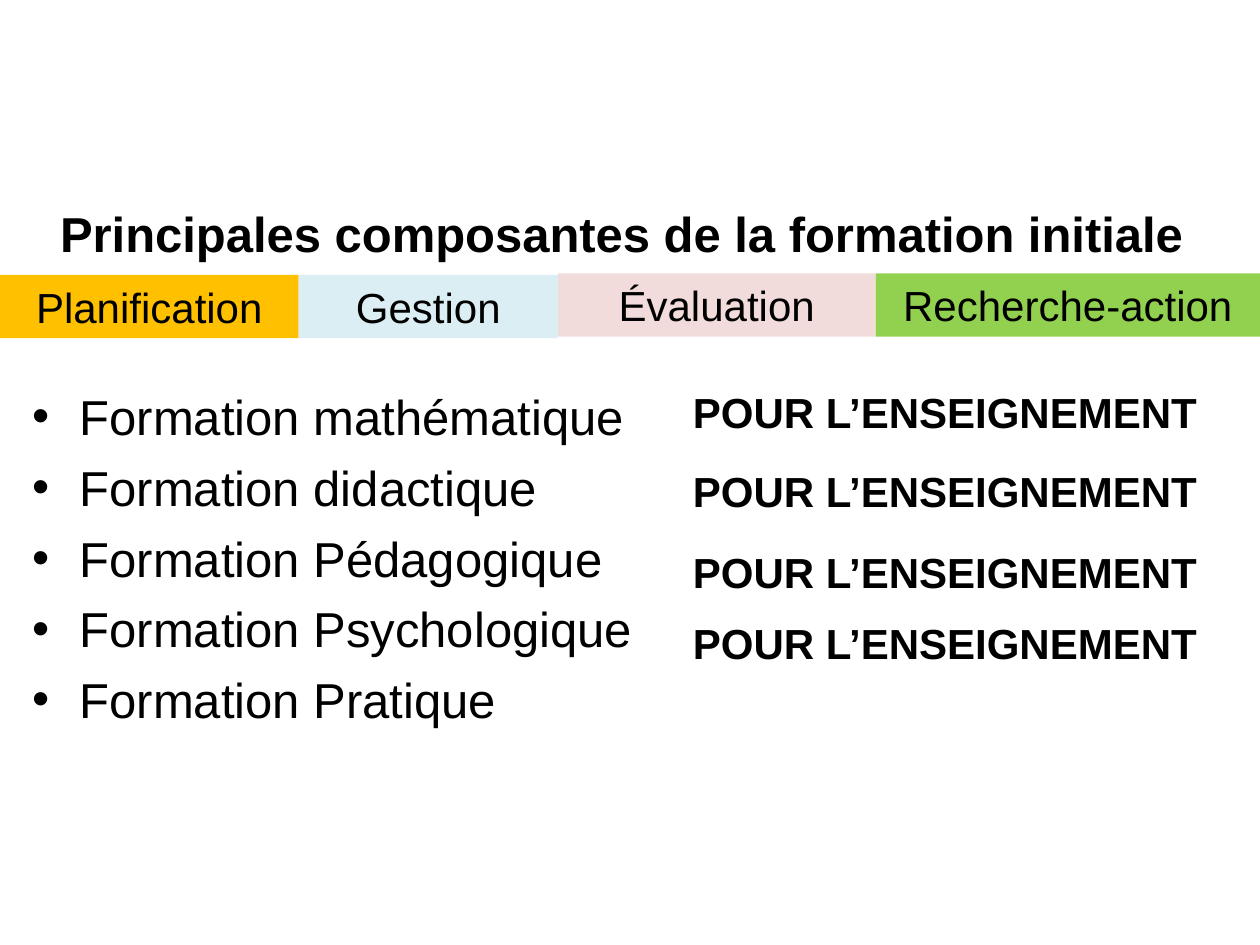
from lxml.etree import SubElement
from pptx import Presentation
from pptx.dml.color import RGBColor
from pptx.enum.shapes import MSO_SHAPE
from pptx.enum.text import MSO_ANCHOR, PP_ALIGN
from pptx.oxml.ns import qn
from pptx.util import Cm, Pt


def color(value):
    return RGBColor.from_string(value)


def format_text(box, size, bold=False, align=PP_ALIGN.LEFT, before=0):
    box.text_frame.word_wrap = True
    for para in box.text_frame.paragraphs:
        para.alignment = align
        para.space_before = Pt(before)
        for span in para.runs:
            span.font.name = "Arial"
            span.font.size = Pt(size)
            span.font.bold = bold
            span.font.color.rgb = color("000000")


deck = Presentation()
deck.slide_width, deck.slide_height = Cm(25.4), Cm(19.05)
page = deck.slides.add_slide(deck.slide_layouts[5])

# Title
title = page.shapes.title
title.left, title.top, title.width, title.height = Cm(0.81), Cm(3.48), Cm(23.44), Cm(2.44)
title.text_frame.text = "Principales composantes de la formation initiale"
title.text_frame.vertical_anchor = MSO_ANCHOR.MIDDLE
format_text(title, 28, bold=True, align=PP_ALIGN.CENTER)

# Bulleted list of training areas
areas = ["mathématique", "didactique", "Pédagogique", "Psychologique", "Pratique"]
area_list = page.shapes.add_textbox(Cm(0.41), Cm(7.67), Cm(13.3), Cm(9.35))
area_list.text_frame.text = "\n".join(f"Formation {area}" for area in areas)
format_text(area_list, 28, before=6.8)
for para in area_list.text_frame.paragraphs:
    properties = para._p.get_or_add_pPr()
    properties.set("marL", str(Cm(0.95)))
    properties.set("indent", str(Cm(-0.95)))
    SubElement(properties, qn("a:buFont"), typeface="Arial")
    SubElement(properties, qn("a:buChar"), char="•")

# Purpose beside the first four areas
for top in (7.67, 9.25, 10.9, 12.32):
    purpose = page.shapes.add_textbox(Cm(13.72), Cm(top), Cm(11.23), Cm(1.55))
    purpose.text_frame.text = "POUR L’ENSEIGNEMENT"
    format_text(purpose, 24, bold=True, before=4.8)

# Band of components, laid edge to edge
components = [
    ("Planification", 5.54, 6.02, "FFC000"),
    ("Gestion", 5.54, 5.23, "DBEEF4"),
    ("Évaluation", 5.51, 6.4, "F2DCDB"),
    ("Recherche-action", 5.51, 7.75, "92D050"),
]
left = 0
for name, top, width, fill in components:
    block = page.shapes.add_shape(MSO_SHAPE.RECTANGLE, Cm(left), Cm(top), Cm(width), Cm(1.28))
    block.shadow.inherit = False
    block.fill.solid()
    block.fill.fore_color.rgb = color(fill)
    block.line.fill.background()
    block.text_frame.text = name
    format_text(block, 24, align=PP_ALIGN.CENTER)
    left += width

deck.save("out.pptx")
